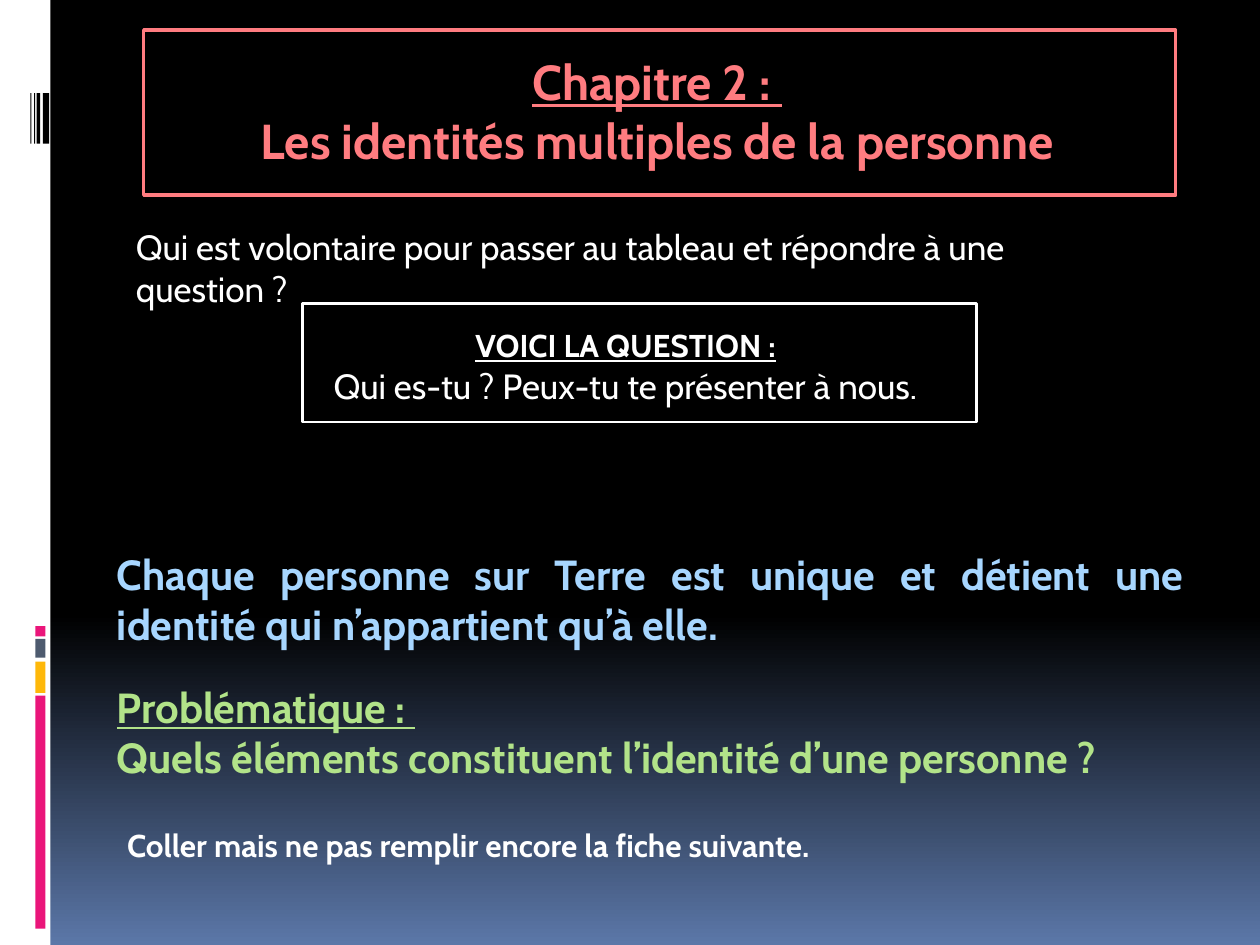
"""Builds the chapter slide about the many identities of a person."""
from dataclasses import dataclass
from typing import NamedTuple, Optional

from pptx import Presentation
from pptx.dml.color import RGBColor
from pptx.enum.shapes import MSO_SHAPE
from pptx.enum.text import MSO_ANCHOR, MSO_AUTO_SIZE, PP_ALIGN
from pptx.util import Inches, Pt


@dataclass(frozen=True)
class Theme:
    font: str = "Cabin"
    black: str = "000000"
    white: str = "FFFFFF"
    dusk: str = "5B77A8"
    pink: str = "EA157A"
    gold: str = "FEB80A"
    slate: str = "4E5B6F"
    coral: str = "FF7C80"
    green: str = "B2E389"
    sky: str = "A7D6FF"
    head: int = 28
    lead: int = 24
    body: int = 20
    note: int = 18


class Box(NamedTuple):
    """Left, top, width and height in grid cells."""
    col: float
    row: float
    cols: float
    rows: float


class Line(NamedTuple):
    text: str
    size: int
    bold: bool = True
    under: bool = False


class Block(NamedTuple):
    box: Box
    color: str
    lines: tuple[Line, ...]
    align: PP_ALIGN = PP_ALIGN.LEFT


class Panel(NamedTuple):
    box: Box
    fill: Optional[str] = None
    edge: Optional[str] = None
    weight: float = 0


THEME = Theme()
COLS, ROWS = 100, 75
CELL = Inches(0.1)

BARS = [
    Panel(Box(0, 0, 4, ROWS), THEME.white),
    *(Panel(Box(2.8, row, 0.8, rows), fill) for row, rows, fill in (
        (55.2, 18.5, THEME.pink), (52.5, 2.5, THEME.gold),
        (50.7, 1.5, THEME.slate), (49.7, 0.8, THEME.pink))),
    *(Panel(Box(col, 7.4, cols, 4), THEME.black) for col, cols in (
        (3.4, 0.5), (2.9, 0.3), (2.7, 0.1), (2.4, 0.1))),
]

FRAMES = [
    Panel(Box(11.4, 2.4, 81.9, 13.1), edge=THEME.coral, weight=2),
    Panel(Box(24, 24.1, 53.5, 9.4), edge=THEME.white, weight=1.5),
]

TITLE = Block(Box(6.7, 3.6, 90.9, 10.4), THEME.coral, (
    Line("Chapitre 2 : ", THEME.head, under=True),
    Line("Les identités multiples de la personne", THEME.head),
), PP_ALIGN.CENTER)

BLOCKS = [
    Block(Box(9.8, 17.4, 82.7, 4.4), THEME.white, (
        Line("Qui est volontaire pour passer au tableau et répondre à une question ?",
             THEME.body, bold=False),)),
    Block(Box(8.3, 25.4, 82.7, 7.4), THEME.white, (
        Line("VOICI LA QUESTION :", THEME.note, under=True),
        Line("Qui es-tu ? Peux-tu te présenter à nous.", THEME.body, bold=False),
    ), PP_ALIGN.CENTER),
    Block(Box(8.3, 53.6, 87.4, 9.1), THEME.green, (
        Line("Problématique : ", THEME.lead, under=True),
        Line("Quels éléments constituent l’identité d’une personne ?", THEME.lead))),
    Block(Box(8.3, 43, 86.6, 9.1), THEME.sky, (
        Line("Chaque personne sur Terre est unique et détient une identité "
             "qui n’appartient qu’à elle.", THEME.lead),), PP_ALIGN.JUSTIFY),
    Block(Box(9.1, 65.1, 62.2, 4), THEME.white, (
        Line("Coller mais ne pas remplir encore la fiche suivante.", THEME.note),)),
]


def place(box: Box) -> list[int]:
    """Turn grid cells into slide lengths."""
    return [round(part * CELL) for part in box]


def paint(slide) -> None:
    """Fade the background from black to dusk blue."""
    fill = slide.background.fill
    fill.gradient()
    fill.gradient_angle = 270
    stops = ((0.65, THEME.black), (1, THEME.dusk))
    for stop, (share, color) in zip(fill.gradient_stops, stops):
        stop.position = share
        stop.color.rgb = RGBColor.from_string(color)


def draw(slide, panel: Panel) -> None:
    """Draw a filled bar or an outlined frame."""
    shape = slide.shapes.add_shape(MSO_SHAPE.RECTANGLE, *place(panel.box))
    shape.shadow.inherit = False
    if panel.fill:
        shape.fill.solid()
        shape.fill.fore_color.rgb = RGBColor.from_string(panel.fill)
    else:
        shape.fill.background()
    if panel.edge:
        shape.line.color.rgb = RGBColor.from_string(panel.edge)
        shape.line.width = Pt(panel.weight)
    else:
        shape.line.fill.background()


def write(shape, block: Block) -> None:
    """Place a text shape and fill it with the lines of a block."""
    shape.left, shape.top, shape.width, shape.height = place(block.box)
    frame = shape.text_frame
    frame.word_wrap = True
    frame.auto_size = MSO_AUTO_SIZE.SHAPE_TO_FIT_TEXT
    frame.vertical_anchor = MSO_ANCHOR.TOP
    frame.text = "\n".join(line.text for line in block.lines)
    for para, line in zip(frame.paragraphs, block.lines):
        para.alignment = block.align
        font = para.font
        font.name, font.size = THEME.font, Pt(line.size)
        font.bold, font.underline = line.bold, line.under
        font.color.rgb = RGBColor.from_string(block.color)


def main() -> None:
    """Build the slide and save it."""
    deck = Presentation()
    deck.slide_width, deck.slide_height = COLS * CELL, ROWS * CELL
    slide = deck.slides.add_slide(deck.slide_layouts.get_by_name("Title Only"))
    paint(slide)
    for panel in BARS + FRAMES:
        draw(slide, panel)
    write(slide.shapes.title, TITLE)
    for block in BLOCKS:
        write(slide.shapes.add_textbox(*place(block.box)), block)
    deck.save("out.pptx")


if __name__ == "__main__":
    main()
